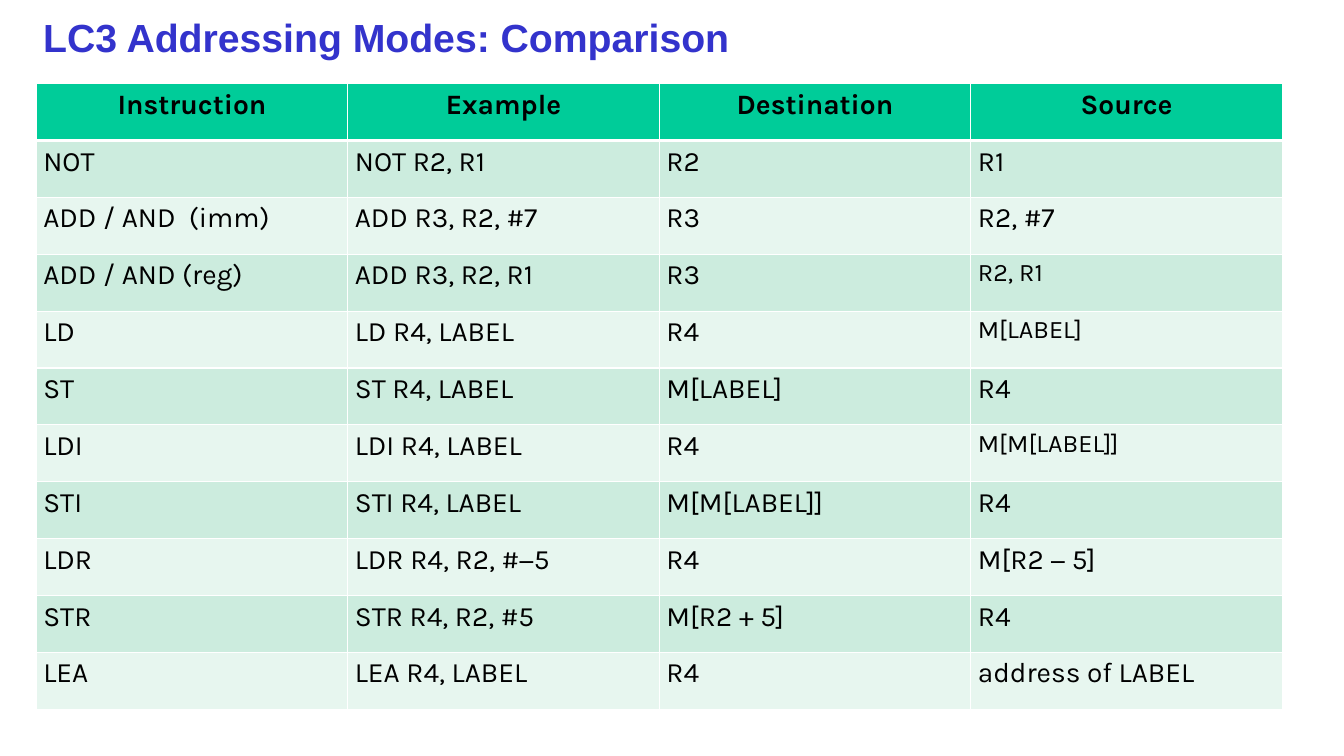
from lxml import etree
from pptx import Presentation
from pptx.dml.color import RGBColor
from pptx.enum.text import MSO_ANCHOR, PP_ALIGN
from pptx.oxml.ns import qn
from pptx.util import Inches, Pt

CENTER, LEFT = PP_ALIGN.CENTER, PP_ALIGN.LEFT
MIDDLE = MSO_ANCHOR.MIDDLE
BLUE = RGBColor(0x33, 0x33, 0xCC)
BLACK = RGBColor(0, 0, 0)
WHITE = RGBColor(0xFF, 0xFF, 0xFF)
HEADER_GREEN = RGBColor(0x00, 0xCC, 0x99)
BAND_GREENS = [RGBColor(0xE7, 0xF6, 0xEF), RGBColor(0xCC, 0xEC, 0xDE)]

ROWS = [
    ("Instruction", "Example", "Destination", "Source"),
    ("NOT", "NOT R2, R1", "R2", "R1"),
    ("ADD / AND  (imm)", "ADD R3, R2, #7", "R3", "R2, #7"),
    ("ADD / AND (reg)", "ADD R3, R2, R1", "R3", "R2, R1"),
    ("LD", "LD R4, LABEL", "R4", "M[LABEL]"),
    ("ST", "ST R4, LABEL", "M[LABEL]", "R4"),
    ("LDI", "LDI R4, LABEL", "R4", "M[M[LABEL]]"),
    ("STI", "STI R4, LABEL", "M[M[LABEL]]", "R4"),
    ("LDR", "LDR R4, R2, #−5", "R4", "M[R2 − 5]"),
    ("STR", "STR R4, R2, #5", "M[R2 + 5]", "R4"),
    ("LEA", "LEA R4, LABEL", "R4", "address of LABEL"),
]
SMALL_SOURCES = {"R2, R1", "M[LABEL]", "M[M[LABEL]]"}


def add_run(p, text, font, size, color, bold):
    r = p.add_run()
    r.text = text
    r.font.name = font
    r.font.size = Pt(size)
    r.font.color.rgb = color
    r.font.bold = bold


def add_border(cell, side, width):
    """Draw a white line on one side (L, R, T or B); call before filling the cell."""
    ln = etree.SubElement(cell._tc.get_or_add_tcPr(), qn(f"a:ln{side}"), w=str(Pt(width)))
    fill = etree.SubElement(ln, qn("a:solidFill"))
    etree.SubElement(fill, qn("a:srgbClr"), val=str(WHITE))


prs = Presentation()
prs.slide_width, prs.slide_height = Inches(13.33), Inches(7.5)
s = prs.slides.add_slide(prs.slide_layouts[6])

title = s.shapes.add_textbox(Inches(0.33), Inches(0.08), Inches(12.67), Inches(0.58))
tf = title.text_frame
tf.word_wrap = True
tf.vertical_anchor = MIDDLE
add_run(tf.paragraphs[0], "LC3 Addressing Modes: Comparison", "Arial", 28, BLUE, True)

table = s.shapes.add_table(len(ROWS), len(ROWS[0]), Inches(0.36), Inches(0.83),
                           Inches(12.36), Inches(6.21)).table

for i, row in enumerate(ROWS):
    header = i == 0
    for j, text in enumerate(row):
        cell = table.cell(i, j)
        cell.margin_left = cell.margin_right = Inches(0.07)
        cell.margin_top = cell.margin_bottom = 0
        for side in "LRTB":
            under_header = (i, side) in {(0, "B"), (1, "T")}
            add_border(cell, side, 3 if under_header else 1)
        cell.fill.solid()
        cell.fill.fore_color.rgb = HEADER_GREEN if header else BAND_GREENS[i % 2]
        p = cell.text_frame.paragraphs[0]
        p.alignment = CENTER if header else LEFT
        p.line_spacing = 1.15
        size = 18 if j == 3 and text in SMALL_SOURCES else 20
        add_run(p, text, "Karla", size, BLACK, header)

prs.save("out.pptx")
